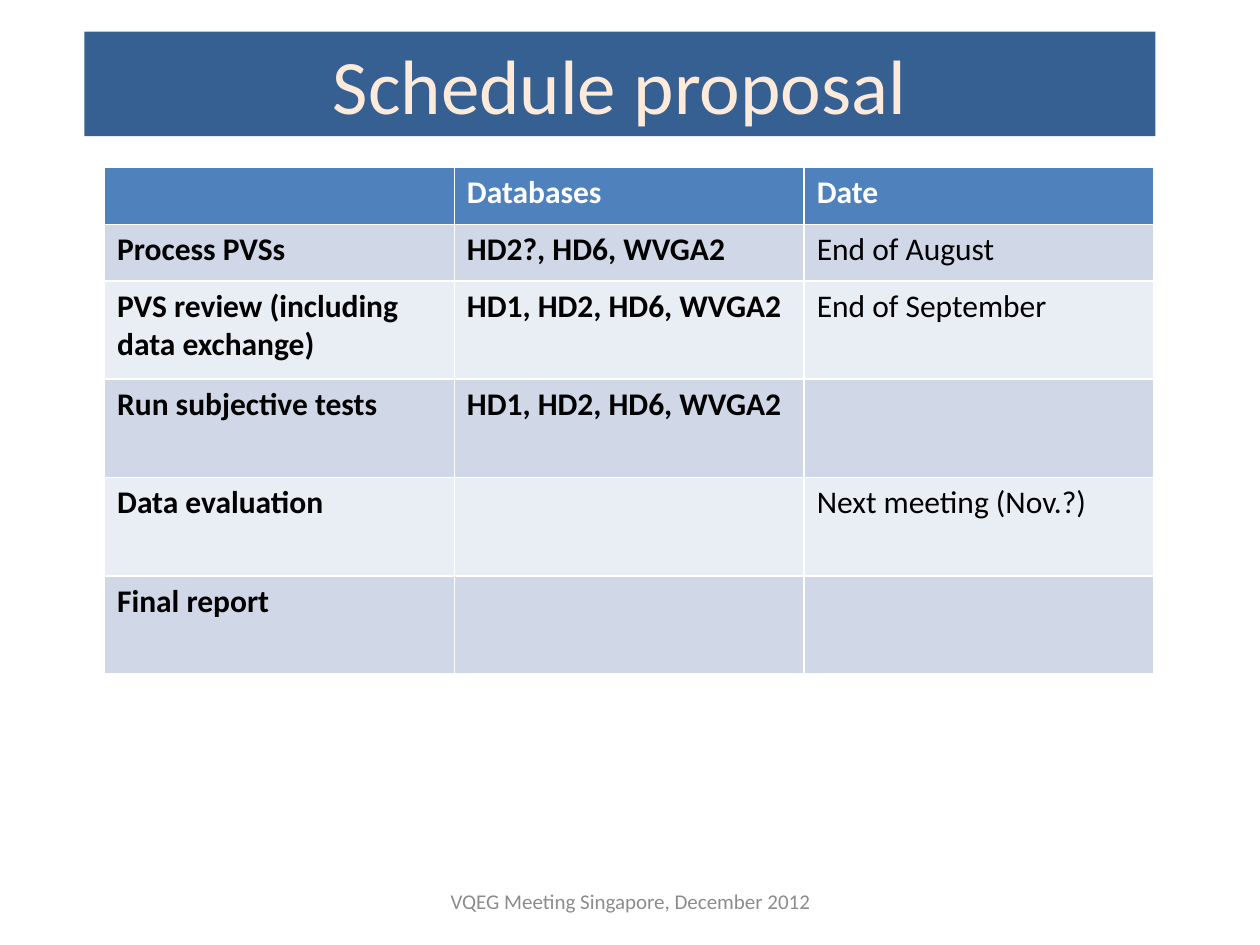
from pptx import Presentation
from pptx.dml.color import RGBColor
from pptx.enum.text import MSO_ANCHOR as Anchor, PP_ALIGN as Align
from pptx.util import Inches, Pt

NAVY = RGBColor(0x37, 0x60, 0x92)
CREAM = RGBColor(0xFD, 0xEA, 0xDA)
BLUE = RGBColor(0x4F, 0x81, 0xBD)
BANDS = RGBColor(0xD0, 0xD8, 0xE8), RGBColor(0xE9, 0xED, 0xF4)
GRAY = RGBColor(0x8C, 0x8C, 0x8C)
WHITE = RGBColor(0xFF, 0xFF, 0xFF)
BLACK = RGBColor(0, 0, 0)

HEIGHTS = [0.45, 0.45, 0.78, 0.78, 0.78, 0.78]
ROWS = [
    ("", "Databases", "Date"),
    ("Process PVSs", "HD2?, HD6, WVGA2", "End of August"),
    ("PVS review (including data exchange)", "HD1, HD2, HD6, WVGA2", "End of September"),
    ("Run subjective tests", "HD1, HD2, HD6, WVGA2", ""),
    ("Data evaluation", "", "Next meeting (Nov.?)"),
    ("Final report", "", ""),
]


class Deck:
    font = "Calibri"

    def __init__(self):
        self.deck = Presentation()
        self.deck.slide_width = Inches(10)
        self.deck.slide_height = Inches(7.5)
        self.slide = self.deck.slides.add_slide(self.deck.slide_layouts[5])

    def label(self, frame, text, size, color, bold=False, align=Align.LEFT):
        frame.word_wrap = True
        para = frame.paragraphs[0]
        para.text = text
        para.alignment = align
        para.font.name = self.font
        para.font.size = Pt(size)
        para.font.bold = bold
        para.font.color.rgb = color

    def title(self, text, left, top, width, height):
        shape = self.slide.shapes.title
        shape.left, shape.top = Inches(left), Inches(top)
        shape.width, shape.height = Inches(width), Inches(height)
        shape.fill.solid()
        shape.fill.fore_color.rgb = NAVY
        shape.text_frame.vertical_anchor = Anchor.MIDDLE
        self.label(shape.text_frame, text, 44, CREAM, align=Align.CENTER)

    def footer(self, text, left, top, width, height):
        box = self.slide.shapes.add_textbox(
            Inches(left), Inches(top), Inches(width), Inches(height))
        box.text_frame.vertical_anchor = Anchor.MIDDLE
        self.label(box.text_frame, text, 12, GRAY, align=Align.CENTER)

    def table(self, rows, heights, left, top, width):
        grid = self.slide.shapes.add_table(
            len(rows), len(rows[0]), Inches(left), Inches(top),
            Inches(width), Inches(sum(heights))).table
        for r, (row, height) in enumerate(zip(rows, heights)):
            grid.rows[r].height = Inches(height)
            head = r == 0
            for c, text in enumerate(row):
                cell = grid.cell(r, c)
                cell.fill.solid()
                cell.fill.fore_color.rgb = BLUE if head else BANDS[(r - 1) % 2]
                self.label(cell.text_frame, text, 18,
                           WHITE if head else BLACK, bold=head or c < 2)


def main():
    page = Deck()
    page.title("Schedule proposal", 0.67, 0.25, 8.5, 0.83)
    page.footer("VQEG Meeting Singapore, December 2012", 3.42, 6.95, 3.17, 0.4)
    page.table(ROWS, HEIGHTS, 0.83, 1.33, 8.33)
    page.deck.save("out.pptx")


if __name__ == "__main__":
    main()
